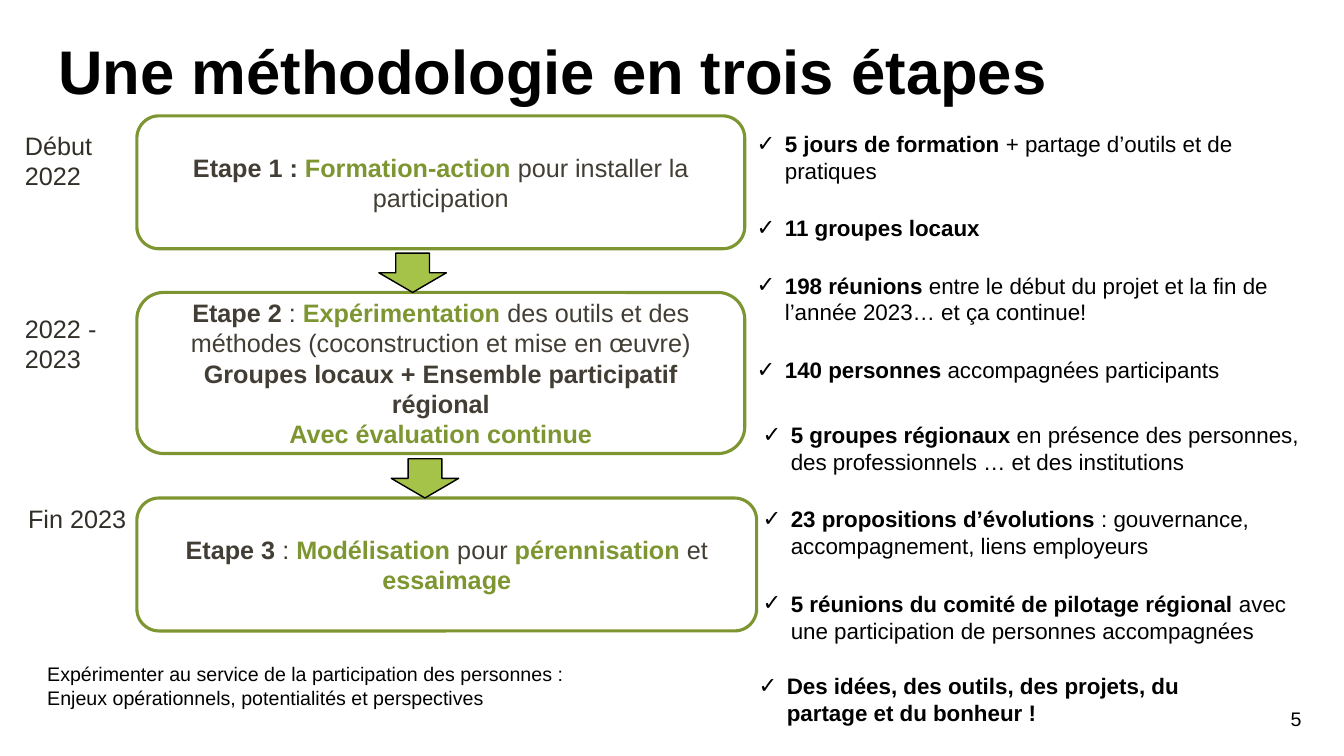
from lxml import etree
from pptx import Presentation
from pptx.dml.color import RGBColor
from pptx.enum.shapes import MSO_SHAPE as SHAPE
from pptx.enum.text import MSO_ANCHOR as ANCHOR, PP_ALIGN as ALIGN
from pptx.oxml.ns import qn
from pptx.util import Cm, Pt

BLACK = RGBColor(0x00, 0x00, 0x00)
WHITE = RGBColor(0xFF, 0xFF, 0xFF)
OLIVE = RGBColor(0x7E, 0x96, 0x32)
LIME = RGBColor(0xA5, 0xC2, 0x49)
BROWN = RGBColor(0x43, 0x3E, 0x35)
DARK = RGBColor(0x32, 0x2E, 0x28)

# Run styles: colour and weight
PLAIN = {"color": BROWN, "bold": False}
STRONG = {"color": BROWN, "bold": True}
KEY = {"color": OLIVE, "bold": True}

STAGE_LEFT = 3.45
# Each stage: date, date position, box (top, width, height), paragraphs of runs
STAGES = [
    ("Début 2022", (0.38, 3.15), (2.92, 15.32, 3.35), [
        [("Etape 1 : ", STRONG), ("Formation-action", KEY),
         (" pour installer la participation", PLAIN)],
    ]),
    ("2022 - 2023", (0.38, 7.77), (7.37, 15.32, 4.06), [
        [("Etape 2 ", STRONG), (": ", PLAIN), ("Expérimentation", KEY),
         (" des outils et des méthodes (coconstruction et mise en œuvre)", PLAIN)],
        [("Groupes locaux + Ensemble participatif régional", STRONG)],
        [("Avec évaluation continue", KEY)],
    ]),
    ("Fin 2023", (0.46, 12.55), (12.55, 15.62, 3.35), [
        [("Etape 3 ", STRONG), (": ", PLAIN), ("Modélisation", KEY),
         (" pour ", PLAIN), ("pérennisation", KEY), (" et ", PLAIN),
         ("essaimage", KEY)],
    ]),
]
ARROWS = [(9.55, 6.38), (9.86, 11.56)]

# Each list: box, then (bold start, plain rest) for each item
RESULTS = [
    ((18.62, 3.15, 14.68, 6.71), [
        ("5 jours de formation", " + partage d’outils et de pratiques"),
        ("11 groupes locaux", ""),
        ("198 réunions ", "entre le début du projet et la fin de l’année 2023… et ça continue!"),
        ("140 personnes ", "accompagnées participants"),
    ]),
    ((18.77, 10.49, 14.33, 5.92), [
        ("5 groupes régionaux ",
         "en présence des personnes, des professionnels … et des institutions"),
        ("23 propositions d’évolutions ", ": gouvernance, accompagnement, liens employeurs"),
        ("5 réunions du comité de pilotage régional ",
         "avec une participation de personnes accompagnées"),
    ]),
    ((18.67, 16.81, 13.46, 1.63), [
        ("Des idées, des outils, des projets, du partage et du bonheur !", ""),
    ]),
]


def add_run(p, text, size, color=BLACK, bold=False):
    r = p.add_run()
    r.text = text
    r.font.color.rgb = color
    for name, value in {"name": "Arial", "size": Pt(size), "bold": bold}.items():
        setattr(r.font, name, value)


def paragraphs(tf, count):
    """Return the first paragraph of the frame and as many new ones as needed."""
    return [tf.paragraphs[0]] + [tf.add_paragraph() for _ in range(count - 1)]


def add_text_frame(s, box):
    tf = s.shapes.add_textbox(*map(Cm, box)).text_frame
    tf.word_wrap = True
    return tf


def add_label(s, box, text, size, align=ALIGN.LEFT, spacing=1.0, **style):
    p = add_text_frame(s, box).paragraphs[0]
    p.alignment = align
    p.line_spacing = spacing
    add_run(p, text, size, **style)


def add_figure(s, kind, box, fill, line, weight):
    sp = s.shapes.add_shape(kind, *map(Cm, box))
    sp.shadow.inherit = False
    sp.fill.solid()
    sp.fill.fore_color.rgb = fill
    sp.line.color.rgb = line
    sp.line.width = Pt(weight)
    return sp


def add_stage(s, date, date_at, box, lines):
    """Place a stage box with its date on the left."""
    top, width, height = box
    sp = add_figure(s, SHAPE.ROUNDED_RECTANGLE, (STAGE_LEFT, top, width, height),
                    WHITE, OLIVE, 2.25)
    tf = sp.text_frame
    tf.word_wrap = True
    tf.vertical_anchor = ANCHOR.MIDDLE
    for p, runs in zip(paragraphs(tf, len(lines)), lines):
        p.alignment = ALIGN.CENTER
        for text, style in runs:
            add_run(p, text, 18, **style)
    add_label(s, (*date_at, 3.66, 1.8), date, 18, color=DARK)


def add_check_mark(p):
    pPr = p._p.get_or_add_pPr()
    pPr.set("marL", str(Cm(0.91)))
    pPr.set("indent", str(Cm(-0.71)))
    etree.SubElement(pPr, qn("a:buFont")).set("typeface", "Arial")
    etree.SubElement(pPr, qn("a:buChar")).set("char", "✓")


def add_results(s, box, items):
    tf = add_text_frame(s, box)
    for i, (p, (strong, rest)) in enumerate(zip(paragraphs(tf, len(items)), items)):
        add_check_mark(p)
        p.space_before = Pt(12.8 if i else 0)
        p.space_after = Pt(9)
        add_run(p, strong, 16, bold=True)
        if rest:
            add_run(p, rest, 16)


def add_footer(s):
    add_label(s, (25.43, 17.7, 7.62, 1.02), "5", 14, ALIGN.RIGHT)
    add_label(s, (0.94, 16.56, 15, 1.45),
              "Expérimenter au service de la participation des personnes : "
              "Enjeux opérationnels, potentialités et perspectives", 14)


def main():
    prs = Presentation()
    prs.slide_width, prs.slide_height = Cm(33.87), Cm(19.05)
    s = prs.slides.add_slide(prs.slide_layouts[6])
    add_footer(s)
    add_label(s, (1.22, 0.91, 29.21, 3.68), "Une méthodologie en trois étapes", 44,
              spacing=0.9, bold=True)
    for stage in STAGES:
        add_stage(s, *stage)
    for at in ARROWS:
        add_figure(s, SHAPE.DOWN_ARROW, (*at, 1.7, 0.99), LIME, BLACK, 1)
    for box, items in RESULTS:
        add_results(s, box, items)
    prs.save("out.pptx")


if __name__ == "__main__":
    main()
